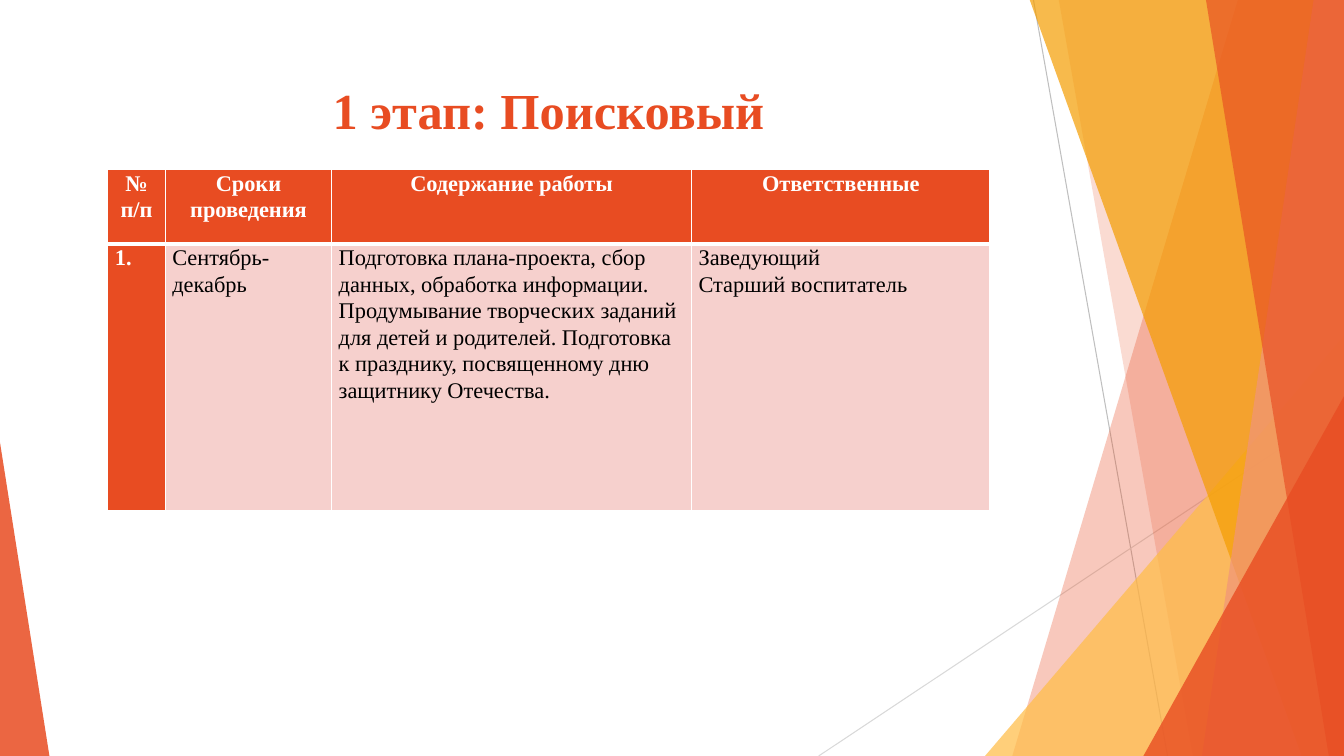
from pptx import Presentation
from pptx.dml.color import RGBColor
from pptx.enum.shapes import MSO_CONNECTOR, MSO_SHAPE
from pptx.enum.text import MSO_ANCHOR, PP_ALIGN
from pptx.oxml.ns import qn
from pptx.util import Inches, Pt
from lxml import etree

LINE, TRI = MSO_CONNECTOR.STRAIGHT, MSO_SHAPE.ISOSCELES_TRIANGLE
TOP, LEFT, MID = MSO_ANCHOR.TOP, PP_ALIGN.LEFT, PP_ALIGN.CENTER
FONT = "Times New Roman"
HEX = {"red": "E84C22", "gold": "FFBD47", "amber": "F49D00", "coral": "F1947A",
       "pink": "F6D0CD", "gray": "BFBFBF", "pale": "D9D9D9",
       "white": "FFFFFF", "black": "000000"}


def paint(shape, color, alpha):
    """Fill without outline or shadow, at a given opacity in percent."""
    shape.shadow.inherit = False
    shape.line.fill.background()
    shape.fill.solid()
    shape.fill.fore_color.rgb = RGBColor.from_string(HEX[color])
    tone = shape.fill._xPr.find(qn("a:solidFill"))[0]
    etree.SubElement(tone, qn("a:alpha")).set("val", str(alpha * 1000))


def style(par, size, color, bold, align):
    par.alignment = align
    for run in par.runs:
        run.font.name, run.font.size, run.font.bold = FONT, Pt(size), bold
        run.font.color.rgb = RGBColor.from_string(HEX[color])


deck = Presentation()
deck.slide_width, deck.slide_height = Inches(13.33), Inches(7.5)
slide = deck.slides.add_slide(deck.slide_layouts[5])
shapes = slide.shapes

# Thin lines behind the bands
for x1, y1, x2, y2, color in [(10.25, 0, 11.58, 7.5, "gray"),
                              (13.33, 4.03, 8.12, 7.5, "pale")]:
    line = shapes.add_connector(LINE, Inches(x1), Inches(y1), Inches(x2), Inches(y2))
    line.line.width = Pt(0.75)
    line.line.color.rgb = RGBColor.from_string(HEX[color])
    etree.SubElement(line._element.spPr, qn("a:effectLst"))

# Bands reach the right edge (top x, foot x); triangles have a box and a tip
decor = [
    ("band", (12.28, 10.04), "red", 30),
    ("band", (10.5, 11.83), "red", 20),
    ("tri", (9.77, 3.33, 3.56, 4.17, 1), "gold", 72),
    ("band", (10.21, 12.91), "amber", 70),
    ("band", (13.03, 11.92), "coral", 70),
    ("band", (11.96, 13.18), "red", 65),
    ("tri", (11.34, 3.93, 1.99, 3.57, 1), "red", 80),
    ("tri", (0, 4.39, 0.49, 3.11, 0), "red", 85),
]
for kind, geo, color, alpha in decor:
    if kind == "band":
        head, foot = geo
        path = shapes.build_freeform(Inches(head), Inches(-0.01))
        path.add_line_segments([(Inches(x), Inches(y)) for x, y in
                                [(13.33, -0.01), (13.33, 7.5), (foot, 7.5)]])
        shape = path.convert_to_shape()
    else:
        shape = shapes.add_shape(TRI, *[Inches(v) for v in geo[:4]])
        shape.adjustments[0] = geo[4]
    paint(shape, color, alpha)

# Title
title = shapes.title
title.left, title.top = Inches(0.74), Inches(0.67)
title.width, title.height = Inches(9.4), Inches(1.44)
frame = title.text_frame
frame.text = "1 этап: Поисковый"
frame.vertical_anchor = TOP
frame.margin_top = Inches(0.11)
style(frame.paragraphs[0], 36, "red", True, MID)

# Table
rows = [
    ["№\nп/п", "Сроки проведения", "Содержание работы", "Ответственные"],
    ["1.", "Сентябрь-декабрь",
     "Подготовка плана-проекта, сбор данных, обработка информации. "
     "Продумывание творческих заданий для детей и родителей. "
     "Подготовка к празднику, посвященному дню защитнику Отечества.",
     "Заведующий\nСтарший воспитатель"],
]
table = shapes.add_table(2, 4, Inches(1.07), Inches(1.68),
                         Inches(8.75), Inches(3.39)).table
table.horz_banding = False
for col, wide in zip(table.columns, [0.57, 1.65, 3.57, 2.96]):
    col.width = Inches(wide)
for row, high in zip(table.rows, [0.74, 2.65]):
    row.height = Inches(high)

for r, texts in enumerate(rows):
    for c, text in enumerate(texts):
        cell = table.cell(r, c)
        head = r == 0 or c == 0
        cell.text_frame.text = text
        cell.margin_left = cell.margin_right = Inches(0.07)
        cell.margin_top = cell.margin_bottom = 0
        for par in cell.text_frame.paragraphs:
            par.line_spacing = 1.07
            style(par, 16, "white" if head else "black", head, LEFT if r else MID)
        # White borders, thick between the two rows; they precede the fill
        props = cell._tc.get_or_add_tcPr()
        for side in "LRTB":
            thick = (r, side) in [(0, "B"), (1, "T")]
            edge = etree.SubElement(props, qn("a:ln" + side))
            edge.set("w", str(Pt(3 if thick else 1)))
            fill = etree.SubElement(edge, qn("a:solidFill"))
            etree.SubElement(fill, qn("a:srgbClr")).set("val", HEX["white"])
        cell.fill.solid()
        cell.fill.fore_color.rgb = RGBColor.from_string(HEX["red" if head else "pink"])

deck.save("out.pptx")
